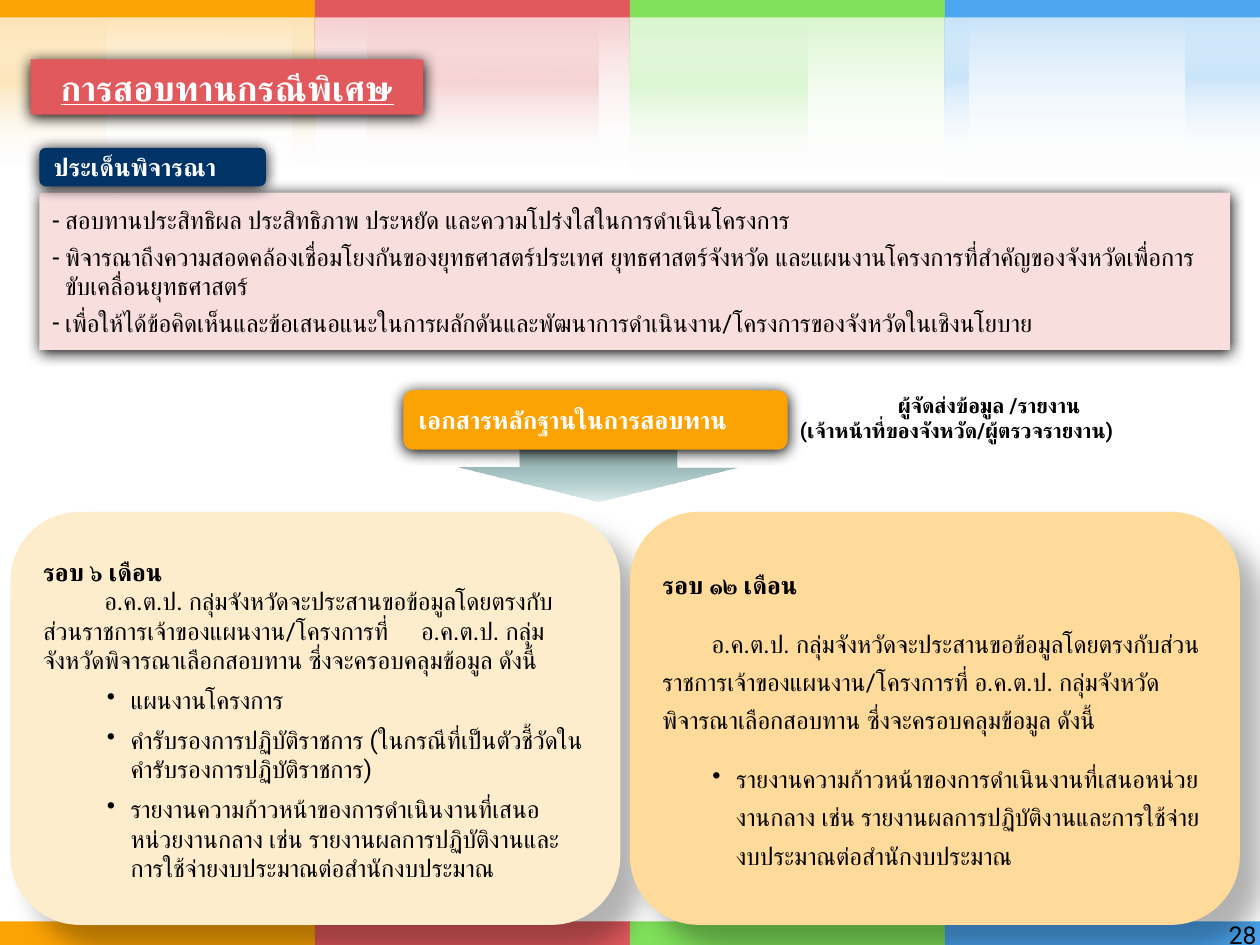
from lxml.etree import SubElement
from pptx import Presentation
from pptx.dml.color import RGBColor
from pptx.enum.shapes import MSO_SHAPE as Kind
from pptx.enum.text import MSO_ANCHOR as Anchor, MSO_AUTO_SIZE as Fit, PP_ALIGN as Align
from pptx.oxml.ns import qn
from pptx.util import Pt

FONT = "Roboto"
COL, BAR = 180, 10
HARD = ("000000", 100, 8.5, 1, 90)
SOFT = ("000000", 30, 15, 18, 45)

BANDS = [
    ("FCA304", 94, 94, [(167, 13), (0, 60.5)]),
    ("E1595C", 94, 94, [(30, 132)]),
    ("80E05A", 98.5, 98.5, [(0, 101.5)]),
    ("4BA5EF", 103, 88, [(0, 13.5), (137.5, 42.5)]),
]

TITLE = "การสอบทานกรณีพิเศษ"
POINTS = [
    "สอบทานประสิทธิผล ประสิทธิภาพ ประหยัด และความโปร่งใสในการดำเนินโครงการ",
    "พิจารณาถึงความสอดคล้องเชื่อมโยงกันของยุทธศาสตร์ประเทศ ยุทธศาสตร์จังหวัด "
    "และแผนงานโครงการที่สำคัญของจังหวัดเพื่อการขับเคลื่อนยุทธศาสตร์",
    "เพื่อให้ได้ข้อคิดเห็นและข้อเสนอแนะในการผลักดันและพัฒนาการดำเนินงาน/โครงการของจังหวัดในเชิงนโยบาย",
]
LABELS = [
    ("ประเด็นพิจารณา", "003366", (22.5, 84.5, 129.5, 22)),
    ("เอกสารหลักฐานในการสอบทาน", "FCA304", (230.5, 223, 219.5, 34)),
]
SENDER = ["ผู้จัดส่งข้อมูล /รายงาน", "(เจ้าหน้าที่ของจังหวัด/ผู้ตรวจรายงาน)"]
REPORT = ("รายงานความก้าวหน้าของการดำเนินงานที่เสนอหน่วยงานกลาง "
          "เช่น รายงานผลการปฏิบัติงานและการใช้จ่ายงบประมาณต่อสำนักงบประมาณ")
INTRO = ("อ.ค.ต.ป. กลุ่มจังหวัดจะประสานขอข้อมูลโดยตรงกับส่วนราชการเจ้าของแผนงาน/โครงการที่{}"
         "อ.ค.ต.ป. กลุ่มจังหวัดพิจารณาเลือกสอบทาน ซึ่งจะครอบคลุมข้อมูล ดังนี้")
CARDS = [
    dict(x=6, fill="FEEDCD", head="รอบ ๖ เดือน", gap="\t", first=35, hang=50,
         lead=0, space=6, line=1.0,
         items=["แผนงานโครงการ",
                "คำรับรองการปฏิบัติราชการ (ในกรณีที่เป็นตัวชี้วัดในคำรับรองการปฏิบัติราชการ)",
                REPORT]),
    dict(x=360, fill="FEDA9B", head="รอบ ๑๒ เดือน", gap=" ", first=28, hang=42,
         lead=12, space=12, line=1.3, items=[REPORT]),
]

deck = Presentation()
deck.slide_width, deck.slide_height = Pt(720), Pt(540)
slide = deck.slides.add_slide(deck.slide_layouts[1])
shapes = slide.shapes


def rgb(code):
    return RGBColor.from_string(code)


def dress(shape, fill=None, shade=None):
    shape.line.fill.background()
    if fill:
        shape.fill.solid()
        shape.fill.fore_color.rgb = rgb(fill)
    else:
        shape.fill.background()
    shape.shadow.inherit = False
    if shade:
        tint, alpha, blur, dist, turn = shade
        list_ = shape.element.spPr.find(qn("a:effectLst"))
        node = SubElement(list_, qn("a:outerShdw"), blurRad=str(Pt(blur)),
                          dist=str(Pt(dist)), dir=str(turn * 60000),
                          algn="ctr", rotWithShape="0")
        paint(node, tint, alpha)


def paint(node, code, alpha):
    tint = SubElement(node, qn("a:srgbClr"), val=code)
    SubElement(tint, qn("a:alpha"), val=str(alpha * 1000))


def draw(kind, box, fill=None, shade=None):
    shape = shapes.add_shape(kind, *map(Pt, box))
    dress(shape, fill, shade)
    return shape


def fade(shape, stops):
    old = shape.element.spPr.find(qn("a:noFill"))
    grad = SubElement(shape.element.spPr, qn("a:gradFill"), rotWithShape="1")
    old.getparent().replace(old, grad)
    row = SubElement(grad, qn("a:gsLst"))
    for pos, code, alpha in stops:
        paint(SubElement(row, qn("a:gs"), pos=str(pos * 1000)), code, alpha)
    SubElement(grad, qn("a:lin"), ang="5400000", scaled="0")


def place(shape, box):
    shape.left, shape.top, shape.width, shape.height = map(Pt, box)
    shapes.element.append(shape.element)


def setup(shape, anchor=Anchor.MIDDLE, wrap=True):
    frame = shape.text_frame
    frame.word_wrap, frame.auto_size = wrap, Fit.NONE
    frame.vertical_anchor = anchor
    return frame


def write(frame, text, size=14, color="000000", bold=False, align=Align.LEFT,
          before=0, line=1.0, left=0, first=0, mark=None, tab=None, under=None):
    para = frame.paragraphs[0]
    if para.text:
        para = frame.add_paragraph()
    para.text, para.alignment, para.line_spacing = text, align, line
    para.space_before = Pt(before)
    props = para._p.get_or_add_pPr()
    props.set("marL", str(Pt(left)))
    props.set("indent", str(Pt(first)))
    if mark:
        SubElement(props, qn("a:buChar"), char=mark)
    else:
        SubElement(props, qn("a:buNone"))
    if tab:
        stops = SubElement(props, qn("a:tabLst"))
        SubElement(stops, qn("a:tab"), pos=str(Pt(tab)), algn="l")
    font = para.font
    font.size, font.bold, font.underline, font.name = Pt(size), bold, under, FONT
    font.color.rgb = rgb(color)
    SubElement(props.find(qn("a:defRPr")), qn("a:cs"), typeface=FONT)


for i, (color, tall, short, strips) in enumerate(BANDS):
    x = i * COL
    wash = [(0, color, 20), (100, "FFFFFF", 0)]
    glow = [(0, "FFFFFF", 0), (50, color, 20), (100, "FFFFFF", 0)]
    layers = [(0, COL, tall, wash)]
    layers += [(dx, wide, short, glow) for dx, wide in strips]
    layers.append(layers[0])
    for dx, wide, high, stops in layers:
        fade(draw(Kind.RECTANGLE, (x + dx, 0, wide, high)), stops)
for i, band in enumerate(BANDS):
    draw(Kind.RECTANGLE, (i * COL, 0, COL, BAR), band[0])
    draw(Kind.RECTANGLE, (i * COL, 526.5, COL, 13.5), band[0])

page = setup(shapes.add_textbox(Pt(638), Pt(522), Pt(82), Pt(18)), Anchor.TOP)
page.margin_right = Pt(2)
write(page, "28", align=Align.RIGHT)

body = slide.placeholders[1]
place(body, (22.5, 110, 680.5, 90))
dress(body, "F9DEDE", HARD)
frame = setup(body)
for i, point in enumerate(POINTS):
    write(frame, point, before=4 if i else 0, left=7.5, first=-7.5, mark="-")

for card in CARDS:
    frame = setup(draw(Kind.ROUNDED_RECTANGLE, (card["x"], 292.5, 348.5, 236),
                       card["fill"], SOFT))
    write(frame, card["head"], bold=True, line=1.1)
    write(frame, INTRO.format(card["gap"]), before=card["lead"], line=card["line"],
          first=card["first"], tab=211 if card["gap"] == "\t" else None)
    for item in card["items"]:
        write(frame, item, before=card["space"], line=card["line"],
              left=card["hang"], first=-13.5, mark="•")

arrow = draw(Kind.DOWN_ARROW, (261.5, 245.5, 160.5, 41))
arrow.adjustments[0], arrow.adjustments[1] = 0.56, 0.48
fade(arrow, [(0, "969696", 100), (100, "006666", 10)])

for text, fill, box in LABELS:
    frame = setup(draw(Kind.ROUNDED_RECTANGLE, box, fill, HARD))
    write(frame, text, color="FFFFFF", bold=True)

frame = setup(shapes.add_textbox(Pt(450), Pt(220.5), Pt(230.5), Pt(36)), Anchor.TOP)
for text, align in zip(SENDER, (Align.CENTER, Align.LEFT)):
    write(frame, text, size=12, bold=True, align=align)

title = shapes.title
place(title, (17.5, 34, 224.5, 31.5))
dress(title, "E1595C", HARD)
write(setup(title, wrap=False), TITLE, size=20, color="FFFFFF", bold=True,
      align=Align.CENTER, under=True)

deck.save("out.pptx")
